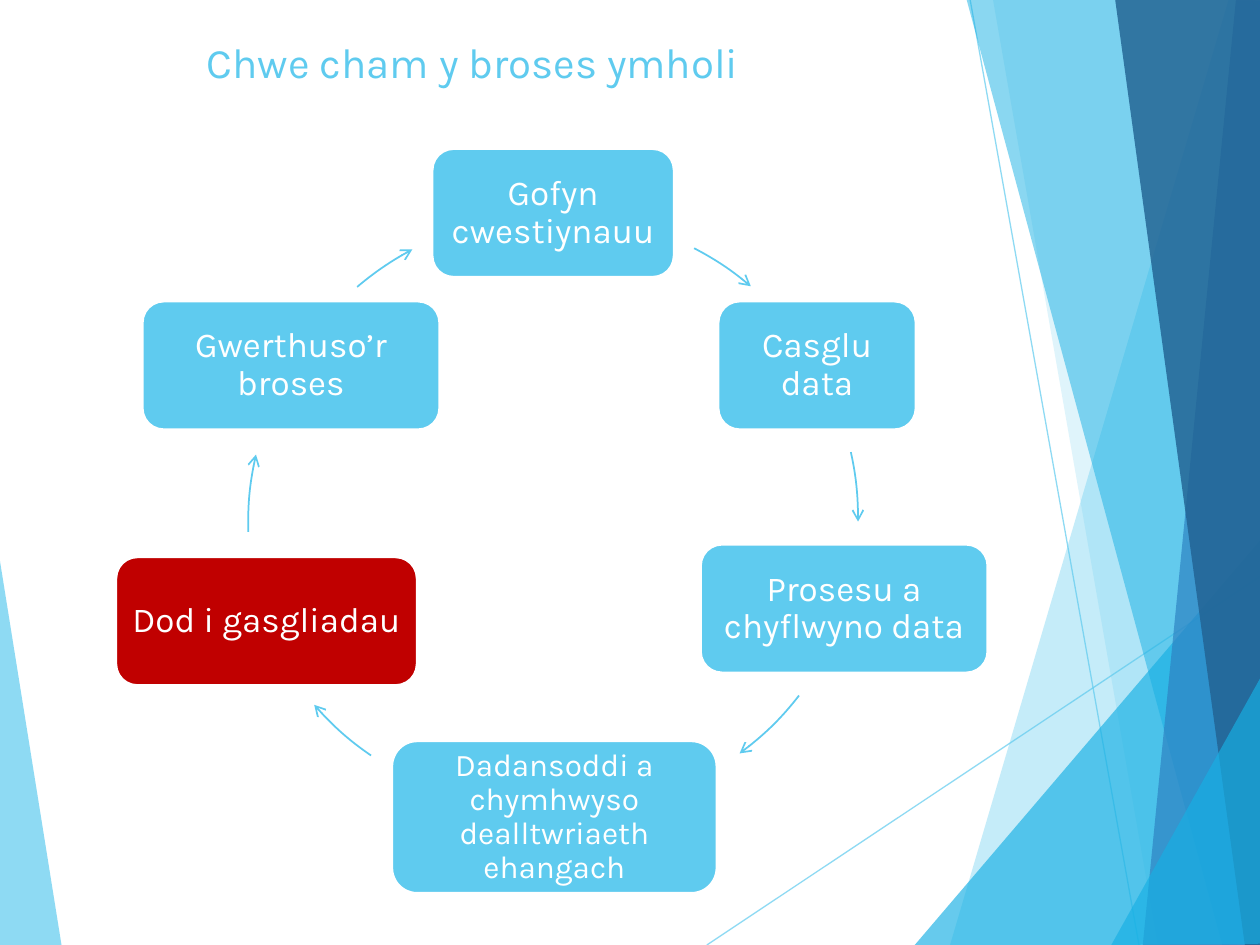
from lxml.etree import SubElement
from pptx import Presentation
from pptx.dml.color import RGBColor
from pptx.enum.shapes import MSO_CONNECTOR as CONN, MSO_SHAPE as SHAPE
from pptx.enum.text import MSO_ANCHOR as ANCHOR, MSO_AUTO_SIZE as AUTO, PP_ALIGN as ALIGN
from pptx.oxml.ns import qn
from pptx.util import Inches, Pt

# The slide is a grid of 100 columns by 75 rows of square cells
CELL = Inches(0.1)
COLS, ROWS = 100, 75
FONT = "Karla"
SKY, CYAN, BLUE, NAVY = "5FCBEF", "17B0E4", "2E83C3", "226292"
RED, WHITE = "C00000", "FFFFFF"
RING = 48.2  # diameter of the circle the arrows follow

# Facets behind the content: colour, opacity in percent, corners
LEFT_FACET = (SKY, 70, [(-0.1, 43.9), (4.9, 75.1), (-0.1, 75)])
RIGHT_FACETS = [
    (SKY, 36, [(97.5, 0), (75.4, 75), (100.2, 75.1), (100.1, 0.1)]),
    (SKY, 20, [(78.8, -0.1), (91.9, 75), (100.1, 75), (100.1, -0.1)]),
    (CYAN, 66, [(72.6, 75), (100, 42.9), (100.1, 75)]),
    (CYAN, 50, [(76.7, -0.1), (97, 75), (100.1, 74.9), (100.1, -0.1)]),
    (BLUE, 70, [(98.1, -0.1), (90.7, 75), (100.1, 75), (100, -0.1)]),
    (NAVY, 82, [(88.5, -0.1), (98.8, 75), (100.2, 75), (100, -0.1)]),
    (CYAN, 66, [(88.2, 75), (100.2, 53.5), (100.2, 74.9)]),
]
RAYS = [(56.1, 75, 100.1, 45.7), (77, 0, 90.4, 75)]

# Steps: text, left, top, width, height, format
STEPS = [
    ("Gofyn cwestiynauu", 34.3, 11.8, 19.2, 10.2, {}),
    ("Casglu data", 57, 23.9, 15.7, 10.2, {}),
    ("Prosesu a chyflwyno data", 55.6, 43.2, 22.8, 10.2, {}),
    ("Dadansoddi a chymhwyso dealltwriaeth ehangach", 31.1, 58.8, 25.8, 12.1, {"size": 18}),
    ("Dod i gasgliadau", 9.2, 44.2, 23.9, 10.2, {"fill": RED}),
    ("Gwerthuso’r broses", 11.3, 23.9, 23.6, 10.2, {}),
]
# Arrows: left and top of the ring, start and end angle (clockwise from east)
ARROWS = [
    (19.9, 17, 297.4, 310.3),
    (19.9, 17, 347.5, 0.7),
    (20.3, 16.3, 37.9, 53.6),
    (19, 16, 124.5, 138.9),
    (19.7, 17.4, 178.3, 193),
    (19.9, 17, 229.5, 242.1),
]


def cells(*counts):
    return [round(n * CELL) for n in counts]


def paint(color_format, color):
    color_format.rgb = RGBColor.from_string(color)


def fade(sp, percent):
    for clr in sp._element.spPr.iter(qn("a:srgbClr")):
        SubElement(clr, qn("a:alpha"), val=str(percent * 1000))


def write(tf, text, size=20, color=WHITE, align=ALIGN.CENTER, anchor=ANCHOR.MIDDLE, spacing=0.9):
    tf.word_wrap = True
    tf.auto_size = AUTO.NONE
    tf.vertical_anchor = anchor
    p = tf.paragraphs[0]
    p.alignment, p.line_spacing = align, spacing
    r = p.add_run()
    r.text = text
    r.font.size, r.font.name = Pt(size), FONT
    paint(r.font.color, color)


def add_facet(shapes, color, opacity, corners):
    first, *rest = [cells(*corner) for corner in corners]
    builder = shapes.build_freeform(*first)
    builder.add_line_segments(rest, close=True)
    sp = builder.convert_to_shape()
    sp.shadow.inherit = False
    sp.fill.solid()
    paint(sp.fill.fore_color, color)
    sp.line.fill.background()
    fade(sp, opacity)


def add_ray(shapes, *ends):
    ray = shapes.add_connector(CONN.STRAIGHT, *cells(*ends))
    paint(ray.line.color, SKY)
    ray.line.width = Pt(0.75)
    fade(ray, 70)
    SubElement(ray._element.spPr, qn("a:effectLst"))


def add_step(shapes, text, left, top, width, height, fill=SKY, size=20):
    sp = shapes.add_shape(SHAPE.ROUNDED_RECTANGLE, *cells(left, top, width, height))
    sp.shadow.inherit = False
    sp.fill.solid()
    paint(sp.fill.fore_color, fill)
    paint(sp.line.color, WHITE)
    sp.line.width = Pt(1.5)
    tf = sp.text_frame
    # The rounded corners already inset the text a little
    tf.margin_left = tf.margin_right = tf.margin_top = tf.margin_bottom = Inches(0.08)
    write(tf, text, size=size)


def add_arrow(shapes, left, top, start, end):
    arc = shapes.add_shape(SHAPE.ARC, *cells(left, top, RING, RING))
    arc.shadow.inherit = False
    # Adjustments count 100000ths, arc angles are 60000ths of a degree
    arc.adjustments[0], arc.adjustments[1] = start * 0.6, end * 0.6
    arc.fill.background()
    paint(arc.line.color, SKY)
    arc.line.width = Pt(1)
    SubElement(arc.line._get_or_add_ln(), qn("a:tailEnd"), type="arrow")


def add_title(slide, text):
    title = slide.shapes.title
    title.left, title.top, title.width, title.height = cells(15.4, 2.4, 69.4, 14.4)
    write(title.text_frame, text, size=24, color=SKY, align=ALIGN.LEFT,
          anchor=ANCHOR.TOP, spacing=1.0)


def main():
    prs = Presentation()
    prs.slide_width, prs.slide_height = cells(COLS, ROWS)
    slide = prs.slides.add_slide(prs.slide_layouts[5])
    shapes = slide.shapes

    # Background
    add_facet(shapes, *LEFT_FACET)
    for ray in RAYS:
        add_ray(shapes, *ray)
    for facet in RIGHT_FACETS:
        add_facet(shapes, *facet)

    # Cycle of steps, each followed by its arrow
    for (*step, style), arrow in zip(STEPS, ARROWS):
        add_step(shapes, *step, **style)
        add_arrow(shapes, *arrow)

    add_title(slide, "Chwe cham y broses ymholi")
    prs.save("out.pptx")


if __name__ == "__main__":
    main()
